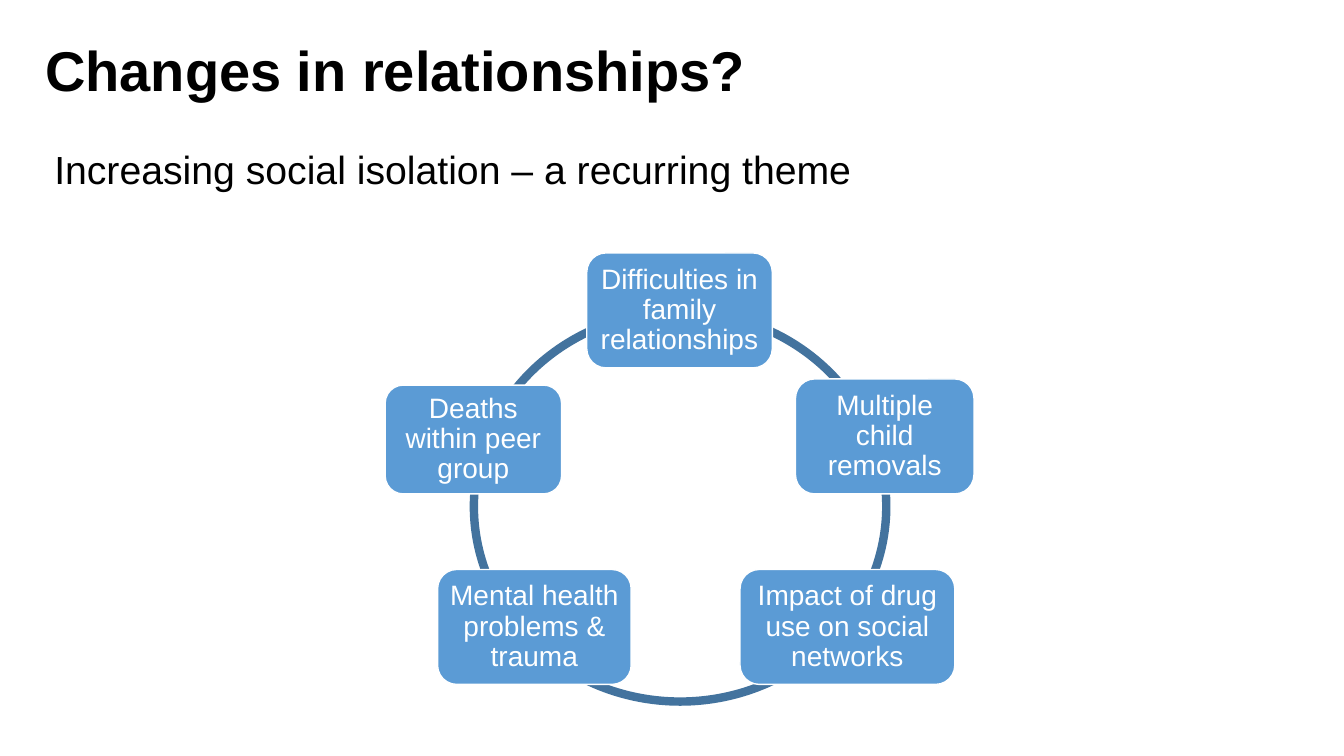
"""Build the slide on changes in relationships, with five causes set around a ring."""
from dataclasses import dataclass

from pptx import Presentation
from pptx.dml.color import RGBColor
from pptx.enum.shapes import MSO_SHAPE as Shape
from pptx.enum.text import MSO_ANCHOR as Anchor, PP_ALIGN as Align
from pptx.util import Inches, Pt


@dataclass(frozen=True)
class Theme:
    font: str = "Arial"
    black: str = "000000"
    white: str = "FFFFFF"
    box: str = "5B9BD5"
    ring: str = "43739E"
    title_size: int = 40
    subtitle_size: int = 28
    box_size: int = 20
    ring_width: int = 6
    box_line: int = 1
    line_spacing: float = 0.9


THEME = Theme()
TITLE = "Changes in relationships?"
SUBTITLE = "Increasing social isolation – a recurring theme"
TITLE_AREA = (0.35, 0, 11.5, 1.45)
SUBTITLE_AREA = (0.44, 1.45, 11.5, 4.76)
RING_AREA = (4.7, 3.09, 4.09, 3.87)
BOX_HEIGHT = 1.14
BOX_INSET = 0.06
CAUSES = [
    {"text": "Difficulties in family relationships", "left": 5.82, "bottom": 3.65, "width": 1.84},
    {"text": "Multiple child removals", "left": 7.89, "bottom": 4.9, "width": 1.77},
    {"text": "Impact of drug use on social networks", "left": 7.34, "bottom": 6.79, "width": 2.13},
    {"text": "Mental health problems & trauma", "left": 4.34, "bottom": 6.79, "width": 1.92},
    {"text": "Deaths within peer group", "left": 3.82, "bottom": 4.9, "width": 1.75, "height": 1.08},
]


def write_text(shape, text, *, size, color, bold=False, align=Align.LEFT,
               anchor=Anchor.MIDDLE, inset=None):
    """Fill a shape with one formatted paragraph."""
    frame = shape.text_frame
    frame.word_wrap = True
    frame.vertical_anchor = anchor
    if inset is not None:
        frame.margin_left = frame.margin_right = Inches(inset)
        frame.margin_top = frame.margin_bottom = Inches(inset)
    paragraph = frame.paragraphs[0]
    paragraph.alignment = align
    paragraph.line_spacing = THEME.line_spacing
    run = paragraph.add_run()
    run.text = text
    run.font.name = THEME.font
    run.font.size = Pt(size)
    run.font.bold = bold
    run.font.color.rgb = RGBColor.from_string(color)


def add_outlined(slide, preset, area, *, fill, line, width):
    """Add a filled preset shape with an outline and no shadow."""
    shape = slide.shapes.add_shape(preset, *map(Inches, area))
    shape.shadow.inherit = False
    shape.fill.solid()
    shape.fill.fore_color.rgb = RGBColor.from_string(fill)
    shape.line.color.rgb = RGBColor.from_string(line)
    shape.line.width = Pt(width)
    return shape


def main():
    """Draw the headings, the ring and its causes, and save the deck."""
    presentation = Presentation()
    presentation.slide_width, presentation.slide_height = Inches(13.33), Inches(7.5)
    slide = presentation.slides.add_slide(presentation.slide_layouts[6])

    title = slide.shapes.add_textbox(*map(Inches, TITLE_AREA))
    write_text(title, TITLE, size=THEME.title_size, color=THEME.black, bold=True)
    subtitle = slide.shapes.add_textbox(*map(Inches, SUBTITLE_AREA))
    write_text(subtitle, SUBTITLE, size=THEME.subtitle_size, color=THEME.black,
               anchor=Anchor.TOP)

    add_outlined(slide, Shape.OVAL, RING_AREA, fill=THEME.white, line=THEME.ring,
                 width=THEME.ring_width)
    for cause in CAUSES:
        height = cause.get("height", BOX_HEIGHT)
        area = (cause["left"], cause["bottom"] - height, cause["width"], height)
        box = add_outlined(slide, Shape.ROUNDED_RECTANGLE, area, fill=THEME.box,
                           line=THEME.white, width=THEME.box_line)
        write_text(box, cause["text"], size=THEME.box_size, color=THEME.white,
                   align=Align.CENTER, inset=BOX_INSET)

    presentation.save("out.pptx")


if __name__ == "__main__":
    main()
